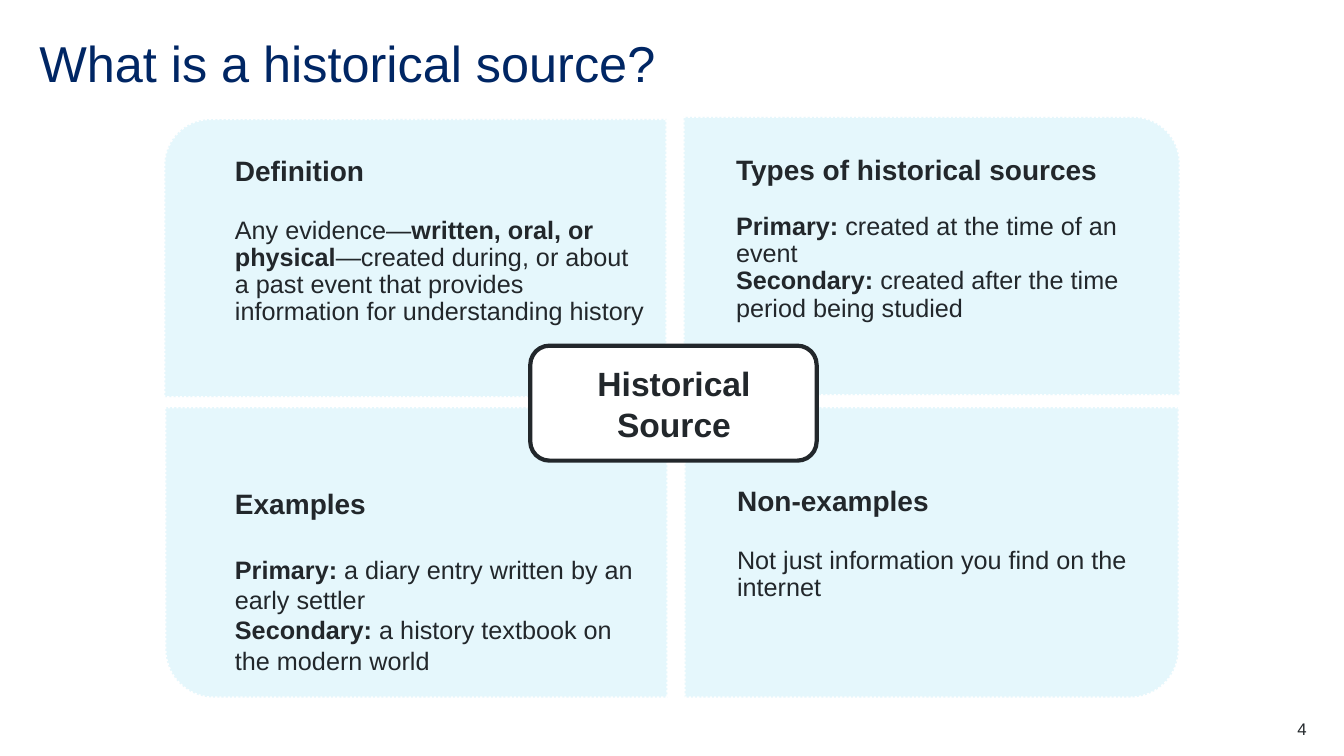
import pptx
import pptx.dml.color
import pptx.enum.dml
import pptx.enum.shapes
import pptx.enum.text
import pptx.util

PX = 9144
FONT = "Arial"
INK = "22272B"
NAVY = "002664"
PALE = "E5F7FC"
WHITE = "FFFFFF"
ALIGN = pptx.enum.text.PP_ALIGN
SHAPES = pptx.enum.shapes.MSO_SHAPE

CARDS = [
    {
        "frame": (163, 118, 498, 276), "turn": 270, "insets": (70, 38, 17, 17),
        "heading": "Definition", "gap": 21.5, "spacing": 0.9,
        "body": [[("Any evidence—", False), ("written, oral, or physical", True),
                  ("—created during, or about a past event that provides "
                   "information for understanding history", False)]],
    },
    {
        "frame": (678, 116, 492, 276), "turn": 0, "insets": (52, 39, 19, 19),
        "heading": "Types of historical sources", "gap": 19.5, "spacing": 0.9,
        "body": [[("Primary: ", True), ("created at the time of an event", False)],
                 [("Secondary: ", True),
                  ("created after the time period being studied", False)]],
    },
    {
        "frame": (164, 404, 498, 288), "turn": 180, "insets": (69, 79, 17, 17),
        "heading": "Examples", "gap": 24, "spacing": None,
        "body": [[("Primary: ", True),
                  ("a diary entry written by an early settler", False)],
                 [("Secondary: ", True),
                  ("a history textbook on the modern world", False)]],
    },
    {
        "frame": (679, 404, 490, 288), "turn": 90, "insets": (52, 79, 17, 17),
        "heading": "Non-examples", "gap": 21.5, "spacing": 0.9,
        "body": [[("Not just information you find on the internet", False)]],
    },
]


def color(value):
    """Turn a hex string into a colour."""
    return pptx.dml.color.RGBColor.from_string(value)


def add_panel(slide, kind, frame, fill, line, width, turn=0):
    """Draw a filled, outlined shape that covers the frame once turned."""
    left, top, across, down = frame
    if turn % 180:
        shift = (across - down) // 2
        left, top, across, down = left + shift, top - shift, down, across
    shape = slide.shapes.add_shape(kind, *(n * PX for n in (left, top, across, down)))
    shape.rotation = turn
    shape.shadow.inherit = False
    shape.fill.solid()
    shape.fill.fore_color.rgb = color(fill)
    shape.line.color.rgb = color(line)
    shape.line.width = pptx.util.Pt(width)
    return shape


def add_text_frame(slide, frame, insets=(0, 0, 0, 0)):
    """Add a wrapping text box and return its text frame."""
    text_frame = slide.shapes.add_textbox(*(n * PX for n in frame)).text_frame
    text_frame.word_wrap = True
    (text_frame.margin_left, text_frame.margin_top,
     text_frame.margin_right, text_frame.margin_bottom) = (n * PX for n in insets)
    return text_frame


def write(paragraph, runs, size, ink=INK, align=ALIGN.LEFT, spacing=None):
    """Fill a paragraph with (text, bold) runs in one font, size and colour."""
    paragraph.alignment = align
    paragraph.line_spacing = spacing
    paragraph.font.name = FONT
    paragraph.font.size = pptx.util.Pt(size)
    paragraph.font.color.rgb = color(ink)
    weights = {bold for _, bold in runs}
    if len(weights) == 1:
        paragraph.font.bold = weights.pop()
    for text, bold in runs:
        run = paragraph.add_run()
        run.text = text
        if paragraph.font.bold is None:
            run.font.bold = bold


def add_card_text(slide, card):
    """Write a card's heading and, after a gap, its body."""
    text_frame = add_text_frame(slide, card["frame"], card["insets"])
    heading = text_frame.paragraphs[0]
    write(heading, [(card["heading"], True)], 20, spacing=card["spacing"])
    heading.space_after = pptx.util.Pt(card["gap"])
    for runs in card["body"]:
        write(text_frame.add_paragraph(), runs, 18, spacing=card["spacing"])


def main():
    """Build the slide and save it."""
    presentation = pptx.Presentation()
    presentation.slide_width = 1333 * PX
    presentation.slide_height = 750 * PX
    slide = presentation.slides.add_slide(presentation.slide_layouts[6])

    title = add_text_frame(slide, (39, 39, 1256, 60))
    write(title.paragraphs[0], [("What is a historical source?", False)], 36, NAVY,
          spacing=0.9)

    for card in CARDS:
        panel = add_panel(slide, SHAPES.ROUND_1_RECTANGLE, card["frame"],
                          PALE, WHITE, 1.5, card["turn"])
        panel.line.dash_style = pptx.enum.dml.MSO_LINE.ROUND_DOT
    add_panel(slide, SHAPES.ROUNDED_RECTANGLE, (526, 343, 284, 114), WHITE, INK, 3)

    topic = add_text_frame(slide, (532, 349, 273, 103), (11, 11, 11, 11))
    topic.vertical_anchor = pptx.enum.text.MSO_ANCHOR.MIDDLE
    write(topic.paragraphs[0], [("Historical Source", True)], 24, align=ALIGN.CENTER)

    for card in CARDS:
        add_card_text(slide, card)

    number = add_text_frame(slide, (1217, 713, 79, 20))
    write(number.paragraphs[0], [("4", False)], 12, align=ALIGN.RIGHT)
    presentation.save("out.pptx")


if __name__ == "__main__":
    main()
